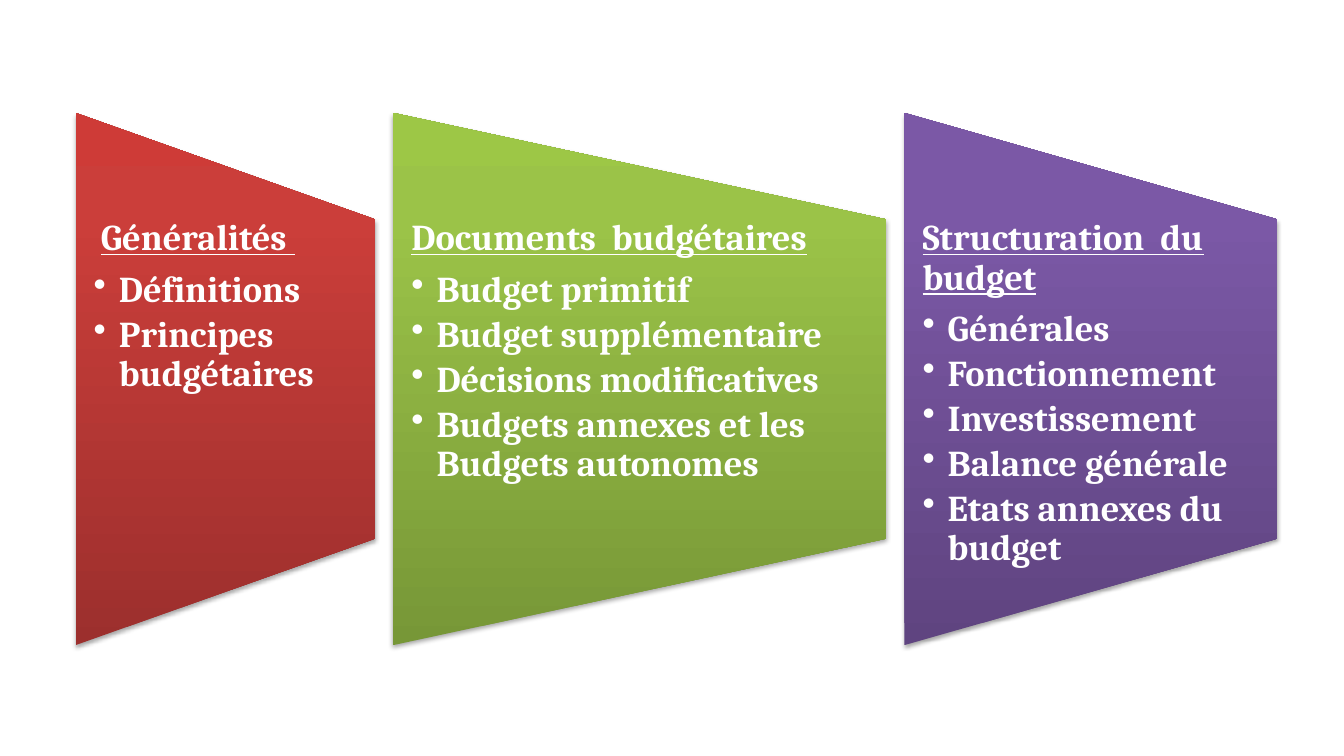
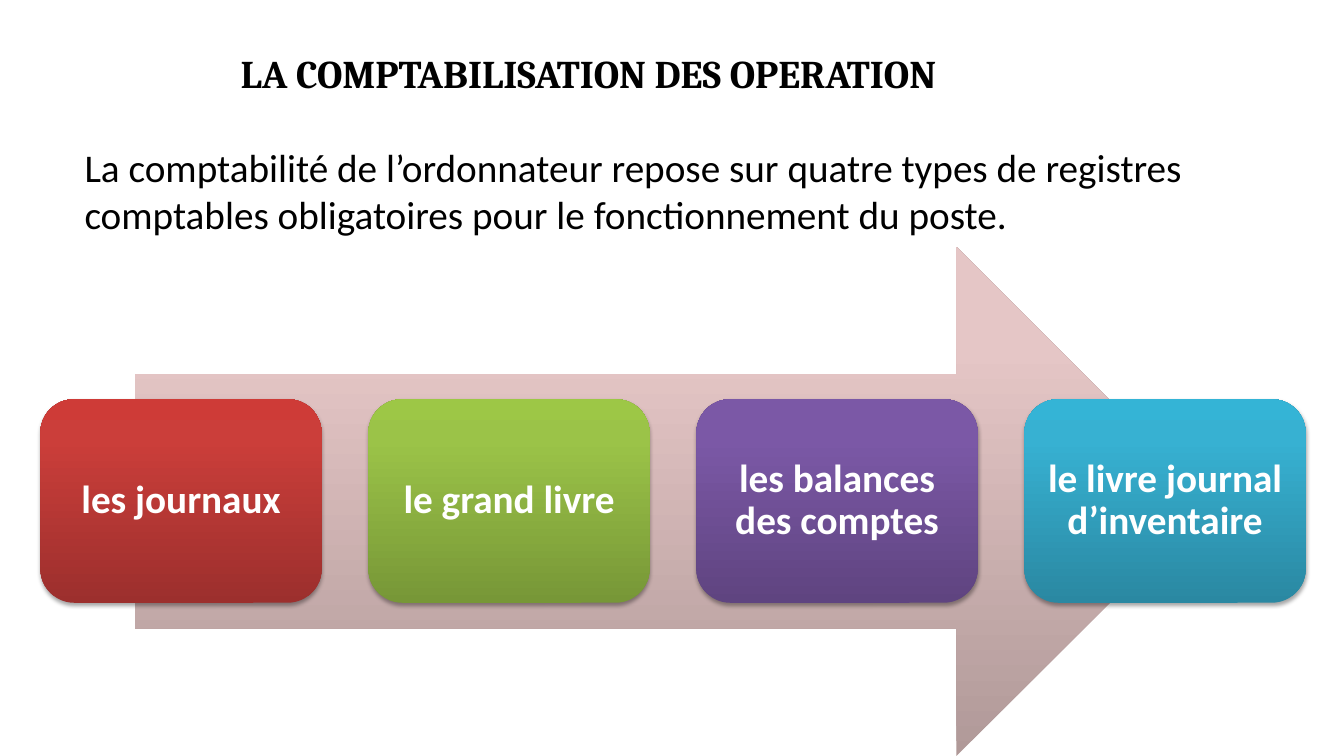
import lxml.etree
import pptx
import pptx.dml.color
import pptx.enum.shapes
import pptx.enum.text
import pptx.oxml
import pptx.oxml.ns
import pptx.util

Inches = pptx.util.Inches
Pt = pptx.util.Pt
RGBColor = pptx.dml.color.RGBColor
MSO_SHAPE = pptx.enum.shapes.MSO_SHAPE
PP_ALIGN = pptx.enum.text.PP_ALIGN
MSO_ANCHOR = pptx.enum.text.MSO_ANCHOR
qn = pptx.oxml.ns.qn
NS = 'xmlns:a="http://schemas.openxmlformats.org/drawingml/2006/main"'

BLACK = RGBColor(0x00, 0x00, 0x00)
WHITE = RGBColor(0xFF, 0xFF, 0xFF)
RED = (RGBColor(0x9C, 0x2F, 0x2D), RGBColor(0xCB, 0x3E, 0x3A), RGBColor(0xCE, 0x3B, 0x37))
GREEN = (RGBColor(0x77, 0x97, 0x37), RGBColor(0x9B, 0xC3, 0x48), RGBColor(0x9D, 0xC7, 0x46))
PURPLE = (RGBColor(0x5F, 0x44, 0x80), RGBColor(0x7B, 0x58, 0xA6), RGBColor(0x7C, 0x57, 0xA8))
TEAL = (RGBColor(0x2A, 0x88, 0xA2), RGBColor(0x37, 0xB1, 0xD2), RGBColor(0x34, 0xB4, 0xD6))
PINK = (RGBColor(0xB0, 0x99, 0x98), RGBColor(0xE5, 0xC6, 0xC6), RGBColor(0xE6, 0xC7, 0xC6))
BODY_FONT = "Calibri"
TITLE_FONT = "Cambria"

PANELS = [
    (2.97, RED, "Généralités ", ["Définitions", "Principes budgétaires"]),
    (4.89, GREEN, "Documents  budgétaires",
     ["Budget primitif", "Budget supplémentaire", "Décisions modificatives",
      "Budgets annexes et les Budgets autonomes"]),
    (3.7, PURPLE, "Structuration  du budget",
     ["Générales", "Fonctionnement", "Investissement", "Balance générale",
      "Etats annexes du budget"]),
]
REGISTERS = [
    (RED, "les journaux"),
    (GREEN, "le grand livre"),
    (PURPLE, "les balances des comptes"),
    (TEAL, "le livre journal d’inventaire"),
]


def add_gradient_shape(slide, preset, box, colors, shadow=True):
    """Add a preset shape with a vertical gradient that ignores rotation."""
    sp = slide.shapes.add_shape(preset, *map(Inches, box))
    sp.shadow.inherit = False
    sp.line.fill.background()
    sp.fill.background()
    stops = "".join(
        f'<a:gs pos="{pos}"><a:srgbClr val="{color}"/></a:gs>'
        for pos, color in zip((0, 80000, 100000), colors))
    gradient = pptx.oxml.parse_xml(
        f'<a:gradFill {NS} rotWithShape="0"><a:gsLst>{stops}</a:gsLst>'
        '<a:lin ang="16200000" scaled="0"/></a:gradFill>')
    props = sp.fill._xPr
    props.replace(props.find(qn("a:noFill")), gradient)
    if shadow:
        props.find(qn("a:effectLst")).append(pptx.oxml.parse_xml(
            f'<a:outerShdw {NS} blurRad="{Pt(3.1)}" dist="{Pt(1.8)}" dir="5400000" '
            'rotWithShape="0"><a:srgbClr val="000000"><a:alpha val="35000"/>'
            '</a:srgbClr></a:outerShdw>'))
    return sp


def set_text(p, text, size, font, color, bold=False, underline=False):
    """Fill a paragraph with text and format its run."""
    p.text = text
    for r in p.runs:
        r.font.size = Pt(size)
        r.font.name = font
        r.font.color.rgb = color
        r.font.bold = bold
        r.font.underline = underline


def set_indent(p, left, first=0, bullet=False):
    """Set paragraph indents and an optional round bullet."""
    props = p._p.get_or_add_pPr()
    props.set("marL", str(Inches(left)))
    props.set("indent", str(Inches(first)))
    if bullet:
        lxml.etree.SubElement(props, qn("a:buChar")).set("char", "•")


def add_text_box(slide, box):
    """Add a wrapping text box and return its text frame."""
    tf = slide.shapes.add_textbox(*map(Inches, box)).text_frame
    tf.word_wrap = True
    return tf


def add_panel(slide, box, colors, heading, items, heading_indent):
    """Add a sideways trapezoid with a heading and bullets."""
    left, top, width, height = box
    sp = add_gradient_shape(
        slide, MSO_SHAPE.FLOWCHART_MANUAL_OPERATION,
        (left + (width - height) / 2, top + (height - width) / 2, height, width), colors)
    sp.rotation = 270
    tf = add_text_box(slide, (left, top + height / 5, width, height * 3 / 5))
    tf.margin_left = tf.margin_right = Inches(0.18)
    tf.margin_top = tf.margin_bottom = 0
    for i, text in enumerate([heading] + items):
        p = tf.paragraphs[0] if i == 0 else tf.add_paragraph()
        set_text(p, text, 26, TITLE_FONT, WHITE, bold=True, underline=i == 0)
        p.line_spacing = 0.9
        p.space_after = Pt(4 if i else 9)
        if i:
            set_indent(p, 0.25, -0.25, bullet=True)
        else:
            set_indent(p, heading_indent)


def add_register(slide, box, colors, label):
    """Add a rounded box with a centred label."""
    sp = add_gradient_shape(slide, MSO_SHAPE.ROUNDED_RECTANGLE, box, colors)
    tf = sp.text_frame
    tf.word_wrap = True
    tf.vertical_anchor = MSO_ANCHOR.MIDDLE
    tf.margin_left = tf.margin_right = tf.margin_top = tf.margin_bottom = Inches(0.12)
    p = tf.paragraphs[0]
    set_text(p, label, 28, BODY_FONT, WHITE, bold=True)
    p.alignment = PP_ALIGN.CENTER
    p.line_spacing = 0.9


def add_register_row(slide, box):
    """Spread the registers evenly across a box."""
    left, top, width, height = box
    box_width = 2.79
    pitch = (width - box_width) / (len(REGISTERS) - 1)
    for i, (colors, label) in enumerate(REGISTERS):
        add_register(slide, (left + i * pitch, top, box_width, height), colors, label)


def add_title(slide, box, text):
    """Add a centred bold title."""
    tf = add_text_box(slide, box)
    tf.vertical_anchor = MSO_ANCHOR.MIDDLE
    p = tf.paragraphs[0]
    set_text(p, text, 28, TITLE_FONT, BLACK, bold=True)
    p.alignment = PP_ALIGN.CENTER


def add_intro(slide, box, text):
    """Add an introductory paragraph."""
    p = add_text_box(slide, box).paragraphs[0]
    set_text(p, text, 28, BODY_FONT, BLACK)
    p.space_before = p.space_after = Pt(12)


def build_outline_slide(prs):
    """Build the slide with the three outline panels."""
    slide = prs.slides.add_slide(prs.slide_layouts[6])
    left = 0.75
    for i, (width, colors, heading, items) in enumerate(PANELS):
        add_panel(slide, (left, 1.12, width, 5.28), colors, heading, items,
                  0 if i else 0.07)
        left += width + 0.18


def build_registers_slide(prs):
    """Build the slide with the four accounting registers."""
    slide = prs.slides.add_slide(prs.slide_layouts[6])
    add_intro(slide, (0.74, 1.37, 11.51, 1.1),
              "La comptabilité de l’ordonnateur repose sur quatre types de registres "
              "comptables obligatoires pour le fonctionnement du poste.")
    add_title(slide, (0.82, 0.24, 10.03, 0.97), "LA COMPTABILISATION DES OPERATION")
    add_gradient_shape(slide, MSO_SHAPE.RIGHT_ARROW, (1.34, 2.45, 10.67, 5.05), PINK,
                       shadow=False)
    add_register_row(slide, (0.4, 3.96, 12.55, 2.02))


def main():
    """Build and save the presentation."""
    prs = pptx.Presentation()
    prs.slide_width = Inches(13.33)
    prs.slide_height = Inches(7.5)
    build_outline_slide(prs)
    build_registers_slide(prs)
    prs.save("out.pptx")


if __name__ == "__main__":
    main()
